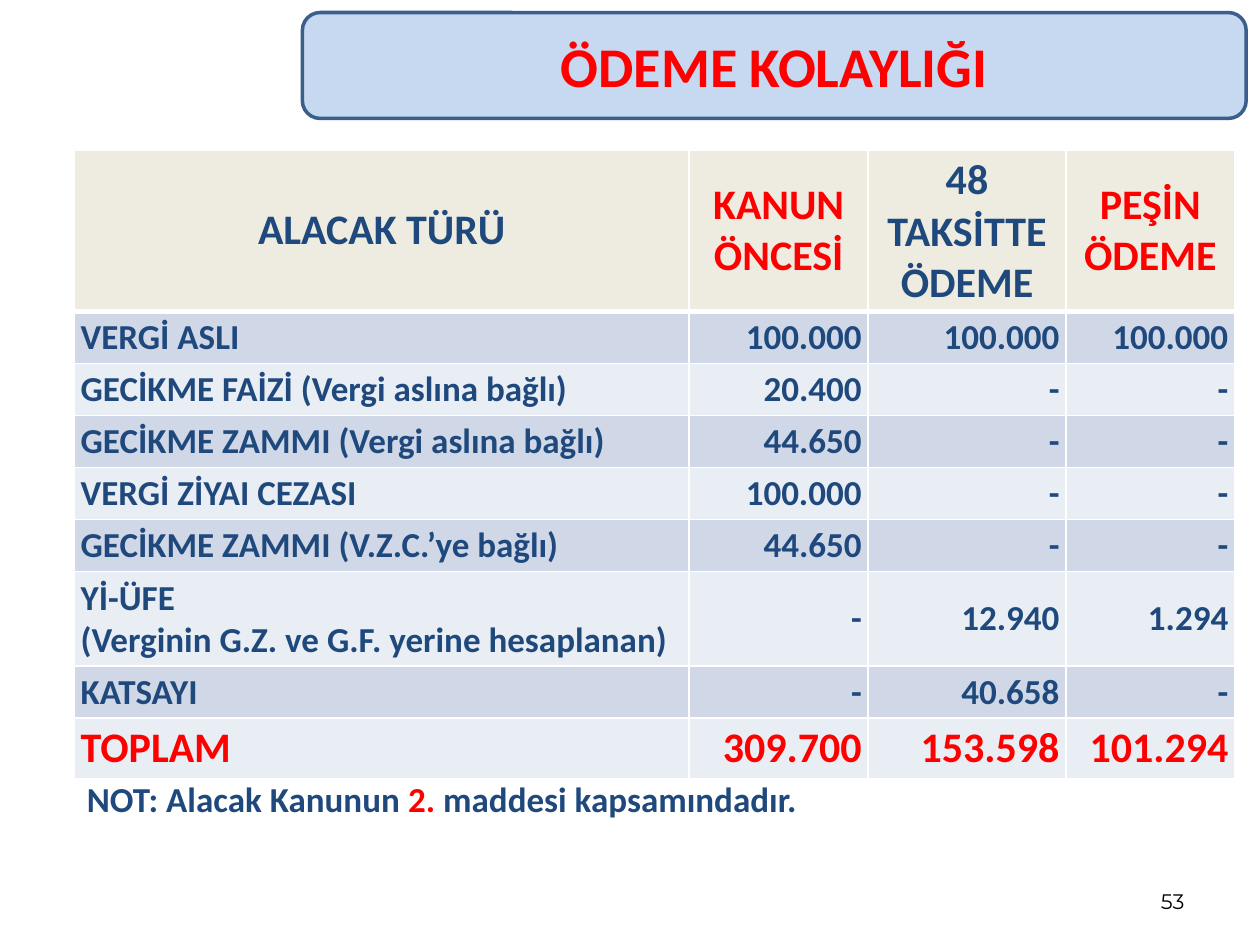
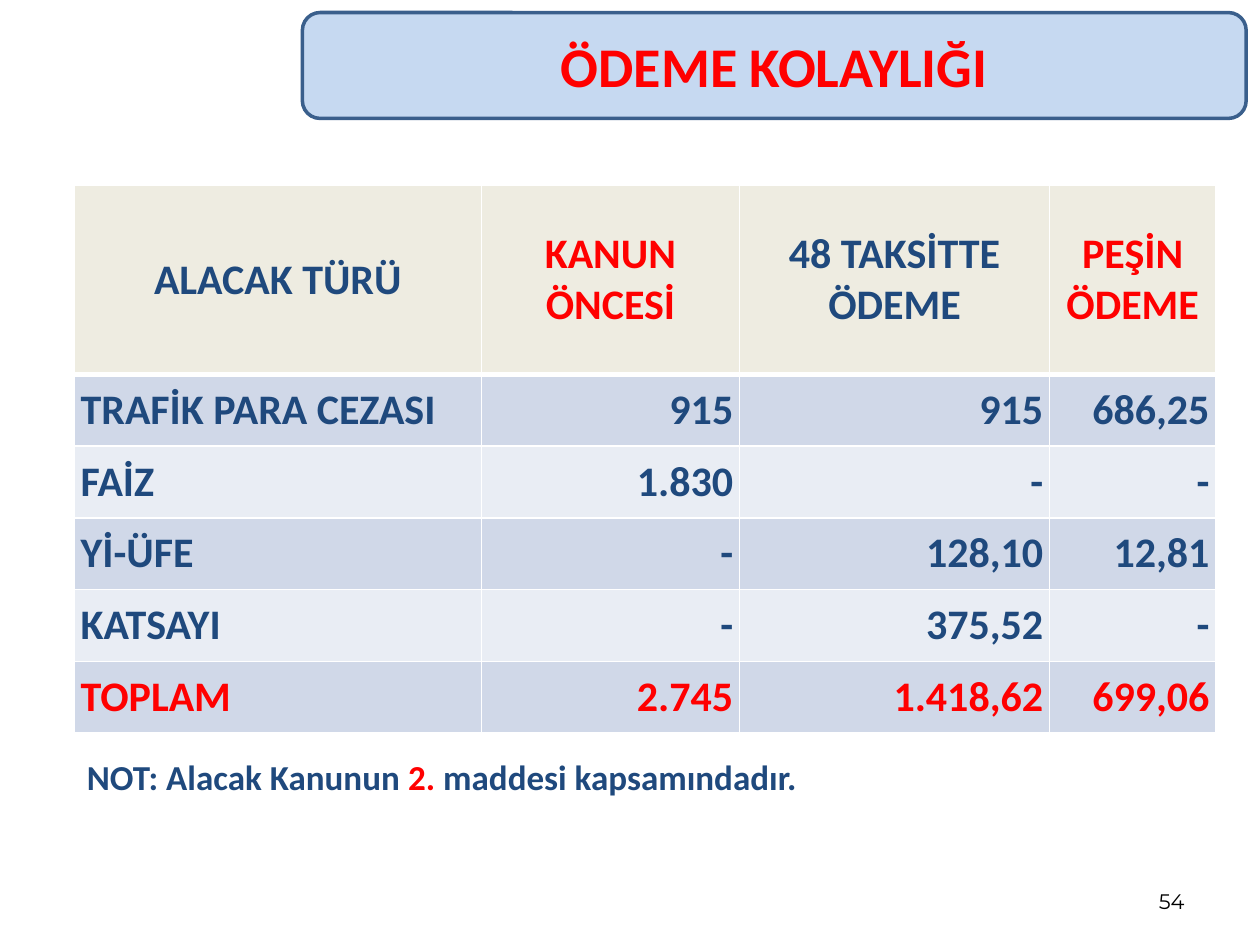
import pptx
import pptx.util
import pptx.dml.color
import pptx.enum.shapes
import pptx.enum.text
import pptx.oxml
import pptx.oxml.ns

Inches = pptx.util.Inches
Pt = pptx.util.Pt
RGBColor = pptx.dml.color.RGBColor
ALIGN = pptx.enum.text.PP_ALIGN
MIDDLE = pptx.enum.text.MSO_ANCHOR.MIDDLE

RED = RGBColor(0xFF, 0x00, 0x00)
NAVY = RGBColor(0x1F, 0x49, 0x7D)
BLACK = RGBColor(0x00, 0x00, 0x00)
SKY = RGBColor(0xC6, 0xD9, 0xF1)
EDGE = RGBColor(0x3A, 0x5F, 0x8C)
CREAM = RGBColor(0xEE, 0xEC, 0xE1)
DARK = RGBColor(0xD0, 0xD8, 0xE8)
LIGHT = RGBColor(0xE9, 0xED, 0xF4)

TITLE = "ÖDEME KOLAYLIĞI"
HEADS = ("ALACAK TÜRÜ", "KANUN ÖNCESİ", "48 TAKSİTTE ÖDEME", "PEŞİN ÖDEME")
NOTE = (("NOT: Alacak Kanunun ", NAVY), ("2.", RED), (" maddesi kapsamındadır.", NAVY))
LEFT = 0.59

TAX = (
    ("VERGİ ASLI", "100.000", "100.000", "100.000"),
    ("GECİKME FAİZİ (Vergi aslına bağlı)", "20.400", "-", "-"),
    ("GECİKME ZAMMI (Vergi aslına bağlı)", "44.650", "-", "-"),
    ("VERGİ ZİYAI CEZASI", "100.000", "-", "-"),
    ("GECİKME ZAMMI (V.Z.C.’ye bağlı)", "44.650", "-", "-"),
    ("Yİ-ÜFE\n(Verginin G.Z. ve G.F. yerine hesaplanan)", "-", "12.940", "1.294"),
    ("KATSAYI", "-", "40.658", "-"),
    ("TOPLAM", "309.700", "153.598", "101.294"),
)
FINE = (
    ("TRAFİK PARA CEZASI", "915", "915", "686,25"),
    ("FAİZ", "1.830", "-", "-"),
    ("Yİ-ÜFE", "-", "128,10", "12,81"),
    ("KATSAYI", "-", "375,52", "-"),
    ("TOPLAM", "2.745", "1.418,62", "699,06"),
)


def style(run, size, color, bold=True, face="Calibri"):
    font = run.font
    font.size = Pt(size)
    font.name = face
    font.bold = bold
    font.color.rgb = color


def write(frame, text, align, *look):
    frame.text = text
    for para in frame.paragraphs:
        para.alignment = align
        for run in para.runs:
            style(run, *look)


def add_box(slide, left, top, width, height):
    box = slide.shapes.add_textbox(Inches(left), Inches(top), Inches(width), Inches(height))
    box.text_frame.word_wrap = True
    return box.text_frame


def add_title(slide):
    kind = pptx.enum.shapes.MSO_SHAPE.ROUNDED_RECTANGLE
    band = slide.shapes.add_shape(kind, Inches(2.4), Inches(0.1), Inches(7.49), Inches(0.84))
    band.shadow.inherit = False
    band.fill.solid()
    band.fill.fore_color.rgb = SKY
    band.line.color.rgb = EDGE
    band.line.width = Pt(2)
    band.text_frame.vertical_anchor = MIDDLE
    write(band.text_frame, TITLE, ALIGN.CENTER, 32, RED)


def add_number(slide, number):
    frame = add_box(slide, 7.17, 6.95, 2.33, 0.4)
    frame.vertical_anchor = MIDDLE
    write(frame, str(number), ALIGN.RIGHT, 12, BLACK, False, "Montserrat")


def add_note(slide, top):
    para = add_box(slide, LEFT, top, 9.21, 0.44).paragraphs[0]
    for text, color in NOTE:
        run = para.add_run()
        run.text = text
        style(run, 20, color)


def add_edges(cell, row):
    props = cell._tc.get_or_add_tcPr()
    wide = {0: "lnB", 1: "lnT"}.get(row)
    for side in ("lnL", "lnR", "lnT", "lnB"):
        width = Pt(3 if side == wide else 1)
        props.append(pptx.oxml.parse_xml(
            f'<a:{side} {pptx.oxml.ns.nsdecls("a")} w="{width}">'
            f'<a:solidFill><a:srgbClr val="FFFFFF"/></a:solidFill></a:{side}>'))


def fill_cell(cell, text, row, col, last, size):
    add_edges(cell, row)
    cell.fill.solid()
    cell.fill.fore_color.rgb = CREAM if row == 0 else DARK if row % 2 else LIGHT
    cell.vertical_anchor = MIDDLE
    cell.margin_left = cell.margin_right = Inches(0.05)
    cell.margin_top = cell.margin_bottom = Inches(0.04)
    if row == 0:
        align, red = ALIGN.CENTER, col % 2 == 1
    else:
        align, red = ALIGN.RIGHT if col else ALIGN.LEFT, row == last
    if row in (0, last):
        size = 24
    write(cell.text_frame, text, align, size, RED if red else NAVY)


def add_grid(slide, top, widths, heights, body, size):
    rows = (HEADS, *body)
    table = slide.shapes.add_table(
        len(rows), len(HEADS), Inches(LEFT), Inches(top),
        Inches(sum(widths)), Inches(sum(heights))).table
    for column, width in zip(table.columns, widths):
        column.width = Inches(width)
    for line, height in zip(table.rows, heights):
        line.height = Inches(height)
    for row, texts in enumerate(rows):
        for col, text in enumerate(texts):
            fill_cell(table.cell(row, col), text, row, col, len(body), size)


def add_page(deck, number, note, *grid):
    slide = deck.slides.add_slide(deck.slide_layouts[6])
    add_title(slide)
    add_number(slide, number)
    add_grid(slide, *grid)
    add_note(slide, note)


def main():
    deck = pptx.Presentation()
    deck.slide_width = Inches(10)
    deck.slide_height = Inches(7.5)
    add_page(deck, 53, 6.12, 1.19, (4.88, 1.42, 1.57, 1.34),
             (1.22, *[0.4] * 5, 0.71, 0.4, 0.46), TAX, 20)
    add_page(deck, 54, 5.95, 1.47, (3.23, 2.05, 2.46, 1.32),
             (1.5, *[0.57] * 5), FINE, 24)
    deck.save("out.pptx")


if __name__ == "__main__":
    main()
